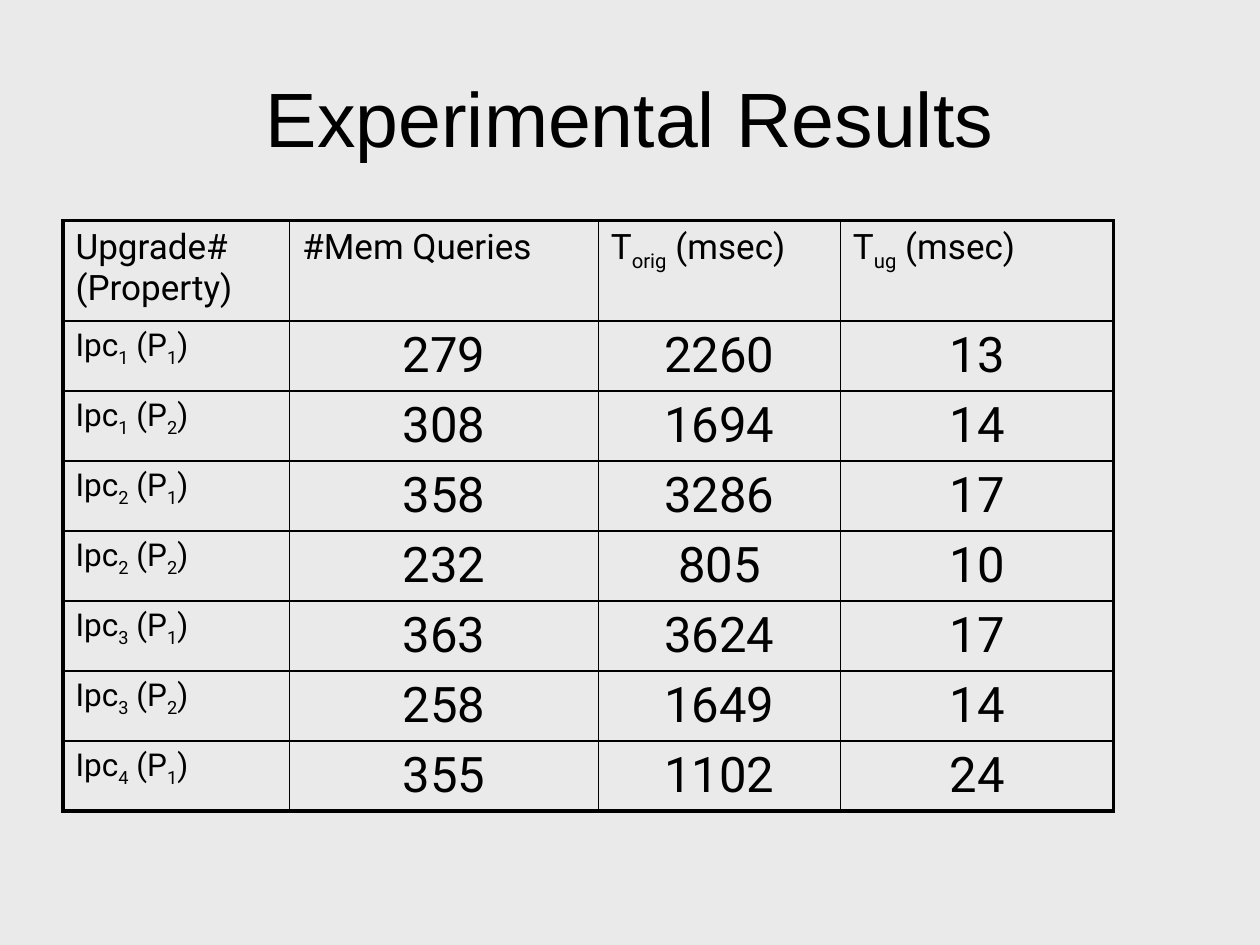
from lxml import etree
from pptx import Presentation
from pptx.dml.color import RGBColor
from pptx.enum.text import MSO_ANCHOR, PP_ALIGN
from pptx.oxml.ns import qn
from pptx.util import Cm, Pt

LEFT, CENTER = PP_ALIGN.LEFT, PP_ALIGN.CENTER
MIDDLE = MSO_ANCHOR.MIDDLE
TITLE_ONLY = 5

COLORS = {"background": "EAEAEA", "ink": "000000"}
TITLE_FONT = {"name": "Arial", "size": Pt(44)}
HEADER_FONT = {"name": "Roboto", "size": Pt(20)}
LABEL_FONT = {"name": "Roboto", "size": Pt(18)}
VALUE_FONT = {"name": "Roboto", "size": Pt(28)}

OUTER_LINE, INNER_LINE = Pt(2.25), Pt(1)
COLUMN_WIDTHS = [4.57, 6.22, 4.88, 5.51]
HEADER_HEIGHT, ROW_HEIGHT = 2.02, 1.41

HEADERS = ["Upgrade# (Property)", "#Mem Queries", "T_orig_ (msec)", "T_ug_ (msec)"]
RESULTS = [
    (1, 1, 279, 2260, 13),
    (1, 2, 308, 1694, 14),
    (2, 1, 358, 3286, 17),
    (2, 2, 232, 805, 10),
    (3, 1, 363, 3624, 17),
    (3, 2, 258, 1649, 14),
    (4, 1, 355, 1102, 24),
]


def format_object(target, values):
    for name, value in values.items():
        setattr(target, name, value)


def write_text(paragraph, text, font, alignment):
    paragraph.alignment = alignment
    for index, part in enumerate(text.split("_")):
        run = paragraph.add_run()
        run.text = part
        format_object(run.font, font)
        run.font.color.rgb = RGBColor.from_string(COLORS["ink"])
        if index % 2:
            run.font._element.set("baseline", "-25000")


def set_space_before(paragraph, percent):
    properties = paragraph._p.get_or_add_pPr()
    spacing = etree.SubElement(properties, qn("a:spcBef"))
    etree.SubElement(spacing, qn("a:spcPct"), val=str(percent * 1000))


def set_borders(cell, widths):
    properties = cell._tc.get_or_add_tcPr()
    for side, width in widths.items():
        line = etree.SubElement(properties, qn(f"a:ln{side}"), w=str(int(width)))
        fill = etree.SubElement(line, qn("a:solidFill"))
        etree.SubElement(fill, qn("a:srgbClr"), val=COLORS["ink"])


def add_title(slide, text):
    title = slide.shapes.title
    format_object(title, {"left": Cm(1.27), "top": Cm(0.76),
                          "width": Cm(22.86), "height": Cm(3.18)})
    title.text_frame.vertical_anchor = MIDDLE
    write_text(title.text_frame.paragraphs[0], text, TITLE_FONT, CENTER)


def fill_cell(cell, text, font, alignment, borders):
    paragraph = cell.text_frame.paragraphs[0]
    write_text(paragraph, text, font, alignment)
    set_space_before(paragraph, 20)
    set_borders(cell, borders)
    cell.fill.background()


def add_results_table(slide):
    rows = [HEADERS]
    for upgrade, prop, *values in RESULTS:
        rows.append([f"Ipc_{upgrade}_ (P_{prop}_)", *map(str, values)])
    heights = [HEADER_HEIGHT] + [ROW_HEIGHT] * len(RESULTS)
    frame = slide.shapes.add_table(
        len(rows), len(HEADERS), Cm(1.27), Cm(4.45),
        Cm(sum(COLUMN_WIDTHS)), Cm(sum(heights)))
    table = frame.table
    format_object(table, {"first_row": False, "horz_banding": False})
    for column, width in zip(table.columns, COLUMN_WIDTHS):
        column.width = Cm(width)
    for row, height in zip(table.rows, heights):
        row.height = Cm(height)

    last_row, last_column = len(rows) - 1, len(HEADERS) - 1
    for r, texts in enumerate(rows):
        for c, text in enumerate(texts):
            if r == 0:
                font, alignment = HEADER_FONT, LEFT
            elif c == 0:
                font, alignment = LABEL_FONT, LEFT
            else:
                font, alignment = VALUE_FONT, CENTER
            edges = {"L": c == 0, "R": c == last_column,
                     "T": r == 0, "B": r == last_row}
            borders = {side: OUTER_LINE if outer else INNER_LINE
                       for side, outer in edges.items()}
            fill_cell(table.cell(r, c), text, font, alignment, borders)


def main():
    presentation = Presentation()
    format_object(presentation, {"slide_width": Cm(25.4), "slide_height": Cm(19.05)})
    slide = presentation.slides.add_slide(presentation.slide_layouts[TITLE_ONLY])
    background = slide.background.fill
    background.solid()
    background.fore_color.rgb = RGBColor.from_string(COLORS["background"])
    add_title(slide, "Experimental Results")
    add_results_table(slide)
    presentation.save("out.pptx")


if __name__ == "__main__":
    main()
